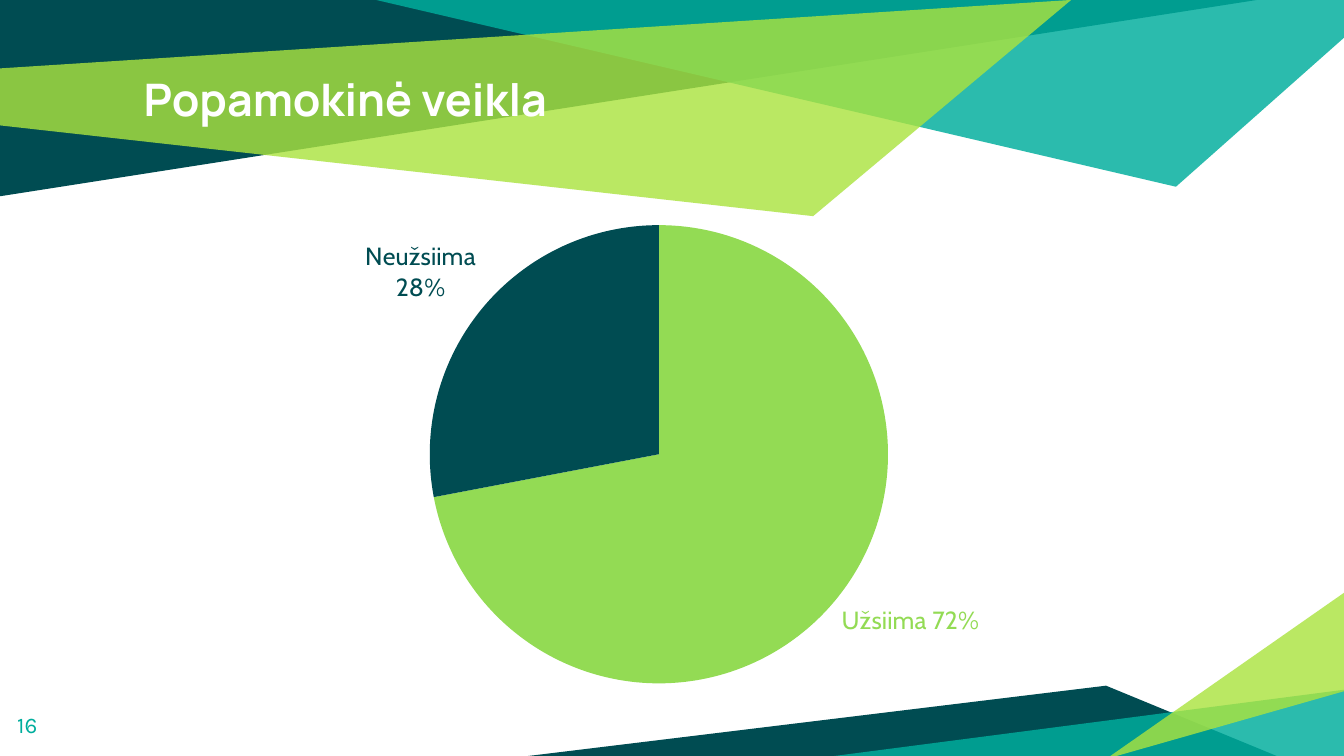
from lxml import etree
from pptx import Presentation
from pptx.chart.data import CategoryChartData
from pptx.dml.color import RGBColor
from pptx.enum.chart import XL_CHART_TYPE as ChartType, XL_LABEL_POSITION as LabelPos
from pptx.enum.text import MSO_ANCHOR as Anchor
from pptx.oxml import parse_xml
from pptx.oxml.ns import nsdecls, qn
from pptx.util import Inches, Pt

DARK = RGBColor(0x00, 0x4C, 0x52)
TEAL = RGBColor(0x00, 0xAE, 0x9D)
LIME = RGBColor(0xAB, 0xE3, 0x3F)
GREEN = RGBColor(0x93, 0xDB, 0x54)
WHITE = RGBColor(0xFF, 0xFF, 0xFF)
BLACK = RGBColor(0x00, 0x00, 0x00)


def write(tf, text, *, font, size, color, bold=False):
    """Fill a text frame, one formatted paragraph for each line."""
    for i, line in enumerate(text.split("\n")):
        p = tf.add_paragraph() if i else tf.paragraphs[0]
        r = p.add_run()
        r.text = line
        f = r.font
        f.name, f.size, f.bold = font, Pt(size), bold
        f.color.rgb = color


class Deck:
    """Current slide and its style; lengths are percentages of the slide."""

    title_font, number_font, chart_font = "Manrope", "Karla", "Cabin"

    def __init__(self, width, height):
        self.prs = Presentation()
        self.prs.slide_width, self.prs.slide_height = Inches(width), Inches(height)
        self.s = self.prs.slides.add_slide(self.prs.slide_layouts[6])

    def x(self, share):
        return round(self.prs.slide_width * share / 100)

    def y(self, share):
        return round(self.prs.slide_height * share / 100)

    def box(self, left, top, width, height):
        return self.x(left), self.y(top), self.x(width), self.y(height)

    def polygon(self, points, color, opacity=100):
        corners = [(self.x(px), self.y(py)) for px, py in points]
        fb = self.s.shapes.build_freeform(*corners[0], scale=1.0)
        fb.add_line_segments(corners[1:], close=True)
        sp = fb.convert_to_shape()
        sp.shadow.inherit = False
        sp.fill.solid()
        sp.fill.fore_color.rgb = color
        sp.line.fill.background()
        if opacity < 100:
            clr = sp.fill._xPr.find(".//" + qn("a:srgbClr"))
            etree.SubElement(clr, qn("a:alpha")).set("val", str(opacity * 1000))

    def text(self, text, box, **fmt):
        tf = self.s.shapes.add_textbox(*self.box(*box)).text_frame
        tf.word_wrap = True
        tf.vertical_anchor = Anchor.TOP
        tf.margin_left = tf.margin_right = tf.margin_top = tf.margin_bottom = Inches(0.1)
        write(tf, text, **fmt)

    def pie(self, box, slices, plot):
        data = CategoryChartData()
        data.categories = [name for name, *_ in slices]
        data.add_series("Series 1", [value for _, value, *_ in slices])
        chart = self.s.shapes.add_chart(ChartType.PIE, *self.box(*box), data).chart
        chart.has_legend = chart.has_title = False
        chart.font.name, chart.font.size = self.chart_font, Pt(10)
        chart.font.color.rgb = BLACK
        chart.plots[0].vary_by_categories = True

        # Slices and their labels
        series = chart.plots[0].series[0]
        for i, (_, _, color, label) in enumerate(slices):
            point = series.points[i]
            point.format.fill.solid()
            point.format.fill.fore_color.rgb = color
            point.format.line.fill.background()
            write(point.data_label.text_frame, label,
                  font=self.chart_font, size=13.3, color=color)
            point.data_label.position = LabelPos.OUTSIDE_END

        # Fixed place of the pie inside the chart
        area = chart.plots[0]._element.getparent()
        for old in area.findall(qn("c:layout")):
            area.remove(old)
        parts = "".join(f'<c:{k} val="{v}"/>' for k, v in zip("xywh", plot))
        area.insert(0, parse_xml(
            f'<c:layout {nsdecls("c")}><c:manualLayout><c:layoutTarget val="inner"/>'
            f'<c:xMode val="edge"/><c:yMode val="edge"/>{parts}'
            '</c:manualLayout></c:layout>'))


def main():
    deck = Deck(10, 10 * 9 / 16)

    # Top ribbons
    deck.polygon([(0, 0), (0, 25.96), (93.5, 0)], DARK)
    deck.polygon([(28, 0), (87.5, 24.7), (100, 5), (100, 0)], TEAL, 83)
    deck.polygon([(-0.1, 9.07), (0, 16.6), (60.5, 28.6), (79.7, 0)], LIME, 81)

    # Bottom ribbons
    deck.polygon([(39.3, 100), (95, 100), (82.3, 90.7)], DARK)
    deck.polygon([(100.2, 91.2), (100.2, 100.4), (60.4, 100.4)], TEAL, 83)
    deck.polygon([(100.1, 91.4), (100.1, 78.3), (82.3, 100.4)], LIME, 81)

    # Title and slide number
    deck.text("Popamokinė veikla", (9.7, 7.75, 80.6, 16.7),
              font=deck.title_font, size=24, color=WHITE, bold=True)
    deck.text("16", (0.3, 92.3, 6, 7.7), font=deck.number_font, size=12, color=TEAL)

    # After-school activity shares
    deck.pie((17.1, 24, 62, 72.2),
             [("Užsiima", 72, GREEN, "Užsiima 72%"),
              ("Neužsiima", 28, DARK, "Neužsiima\n28%")],
             plot=(0.24, 0.08, 0.55, 0.84))

    deck.prs.save("out.pptx")


if __name__ == "__main__":
    main()
